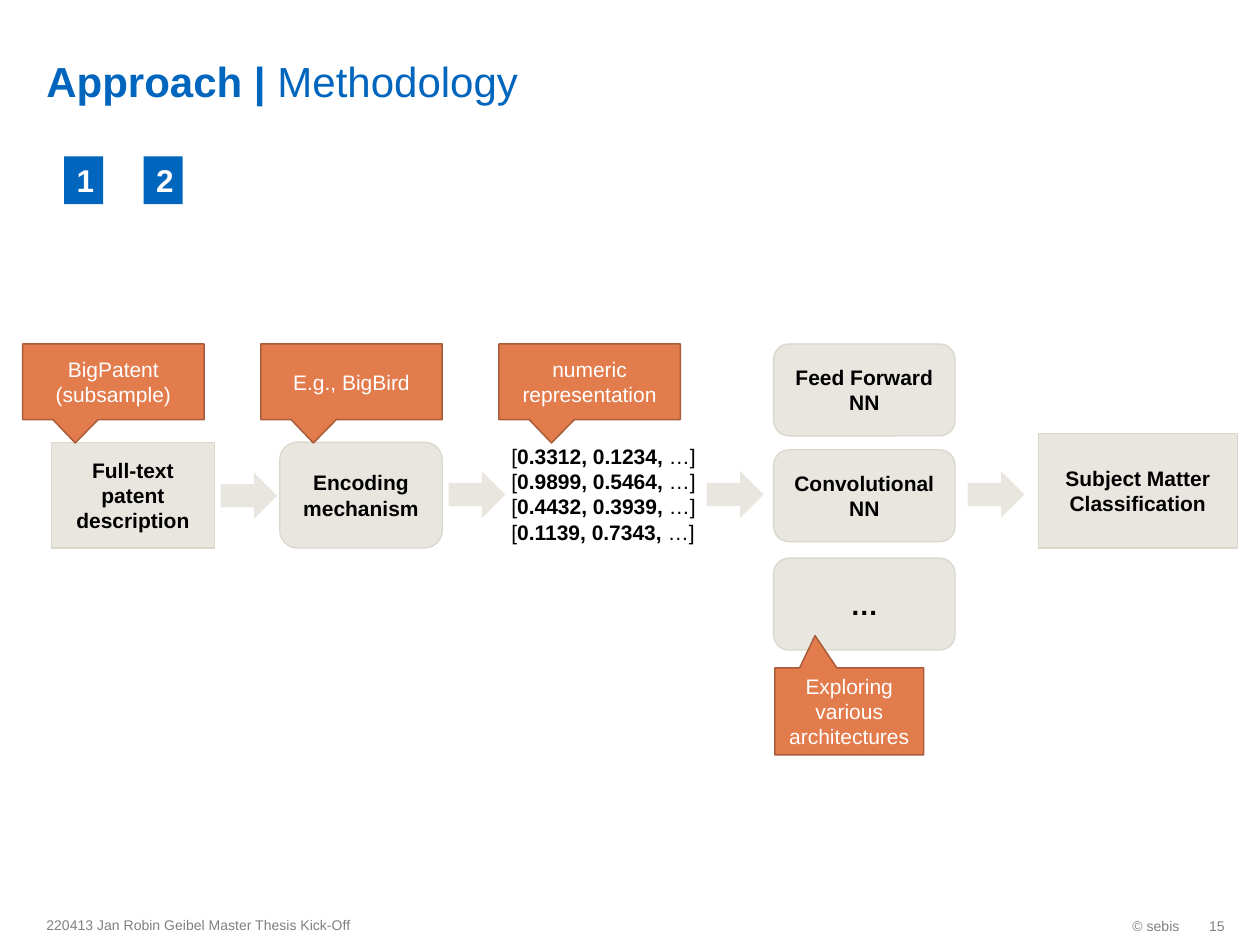
from pptx import Presentation
from pptx.dml.color import RGBColor
from pptx.enum.shapes import MSO_SHAPE
from pptx.enum.text import MSO_ANCHOR, PP_ALIGN
from pptx.util import Inches, Pt

RECT, ROUND = MSO_SHAPE.RECTANGLE, MSO_SHAPE.ROUNDED_RECTANGLE
ARROW, CALLOUT = MSO_SHAPE.RIGHT_ARROW, MSO_SHAPE.RECTANGULAR_CALLOUT
LEFT, CENTER, RIGHT = PP_ALIGN.LEFT, PP_ALIGN.CENTER, PP_ALIGN.RIGHT
TOP, MIDDLE, BOTTOM = MSO_ANCHOR.TOP, MSO_ANCHOR.MIDDLE, MSO_ANCHOR.BOTTOM
COLORS = {
    "blue": "0065BD", "gray": "808080", "black": "000000", "white": "FFFFFF",
    "box": "E8E6DF", "box_line": "DAD7CB",
    "note": "E37C4D", "note_line": "A85C39",
}


def rgb(name):
    return RGBColor.from_string(COLORS[name])


def write(sp, lines, size, color, bold=None, align=CENTER, anchor=MIDDLE):
    """Fill a shape with paragraphs, each a list of (text, bold) runs or a string."""
    tf = sp.text_frame
    tf.word_wrap = True
    tf.vertical_anchor = anchor
    for i, line in enumerate(lines):
        p = tf.paragraphs[0] if i == 0 else tf.add_paragraph()
        p.alignment = align
        p.font.name, p.font.size, p.font.bold = "Arial", Pt(size), bold
        p.font.color.rgb = rgb(color)
        for text, run_bold in [(line, None)] if isinstance(line, str) else line:
            r = p.add_run()
            r.text = text
            if run_bold is not None:
                r.font.bold = run_bold


prs = Presentation()
prs.slide_width, prs.slide_height = Inches(10), Inches(7.5)
s = prs.slides.add_slide(prs.slide_layouts[6])

# Title and footer
title = s.shapes.add_textbox(Inches(0.27), Inches(0.05), Inches(8.24), Inches(0.79))
title.text_frame.margin_top = title.text_frame.margin_bottom = 0
write(title, [[("Approach |\u00a0", True), ("Methodology", False)]], 24, "blue",
      align=LEFT, anchor=BOTTOM)

for text, x, y, w, align in [
    ("© sebis", 7.7, 7.19, 1.76, RIGHT),
    ("220413 Jan Robin Geibel Master Thesis Kick-Off", 0.27, 7.18, 4.73, LEFT),
    ("15", 9.45, 7.19, 0.27, RIGHT),
]:
    footer = s.shapes.add_textbox(Inches(x), Inches(y), Inches(w), Inches(0.32))
    write(footer, [text], 8, "gray", align=align)
footer.text_frame.margin_right = 0  # page number

# Encoded vectors
vectors = s.shapes.add_textbox(Inches(3.96), Inches(3.47), Inches(1.92), Inches(0.91))
rows = ["0.3312, 0.1234, ", "0.9899, 0.5464, ", "0.4432, 0.3939, ", "0.1139, 0.7343, "]
write(vectors, [[("[", False), (row, True), ("…]", False)] for row in rows],
      12, "black", align=LEFT, anchor=TOP)

# Research question numbers
for number, x in [("1", 0.51), ("2", 1.14)]:
    sp = s.shapes.add_shape(RECT, Inches(x), Inches(1.24), Inches(0.31), Inches(0.38))
    sp.shadow.inherit = False
    sp.fill.solid()
    sp.fill.fore_color.rgb = rgb("blue")
    sp.line.fill.background()
    write(sp, [number], 18, "white", bold=True)

# Pipeline steps
for kind, text, x, y, w, h, size in [
    (RECT, "Full-text patent description", 0.41, 3.51, 1.29, 0.84, 12),
    (ROUND, "Encoding mechanism", 2.22, 3.51, 1.29, 0.84, 12),
    (ROUND, "Feed Forward NN", 6.14, 2.73, 1.44, 0.73, 12),
    (ROUND, "Convolutional NN", 6.14, 3.57, 1.44, 0.73, 12),
    (ROUND, "…", 6.14, 4.43, 1.44, 0.73, 16),
    (RECT, "Subject Matter Classification", 8.24, 3.44, 1.58, 0.91, 12),
]:
    sp = s.shapes.add_shape(kind, Inches(x), Inches(y), Inches(w), Inches(h))
    sp.shadow.inherit = False
    sp.fill.solid()
    sp.fill.fore_color.rgb = rgb("box")
    sp.line.color.rgb = rgb("box_line")
    sp.line.width = Pt(0.75)
    write(sp, [text], size, "black", bold=True)

# Arrows between the steps
for x, y in [(1.75, 3.75), (3.56, 3.74), (5.61, 3.74), (7.68, 3.74)]:
    sp = s.shapes.add_shape(ARROW, Inches(x), Inches(y), Inches(0.45), Inches(0.37))
    sp.shadow.inherit = False
    sp.fill.solid()
    sp.fill.fore_color.rgb = rgb("box")
    sp.line.fill.background()

# Callouts, with the tip as a share of width and height from the centre
for lines, x, y, w, h, tip in [
    (["BigPatent", "(subsample)"], 0.18, 2.73, 1.44, 0.6, (-0.21, 0.81)),
    (["E.g., BigBird"], 2.07, 2.73, 1.44, 0.6, (-0.21, 0.81)),
    (["numeric representation"], 3.96, 2.73, 1.44, 0.6, (-0.21, 0.81)),
    (["Exploring various architectures"], 6.15, 5.3, 1.18, 0.69, (-0.23, -0.87)),
]:
    sp = s.shapes.add_shape(CALLOUT, Inches(x), Inches(y), Inches(w), Inches(h))
    sp.adjustments[0], sp.adjustments[1] = tip
    sp.shadow.inherit = False
    sp.fill.solid()
    sp.fill.fore_color.rgb = rgb("note")
    sp.line.color.rgb = rgb("note_line")
    sp.line.width = Pt(0.85)
    write(sp, lines, 12, "white")

prs.save("out.pptx")
